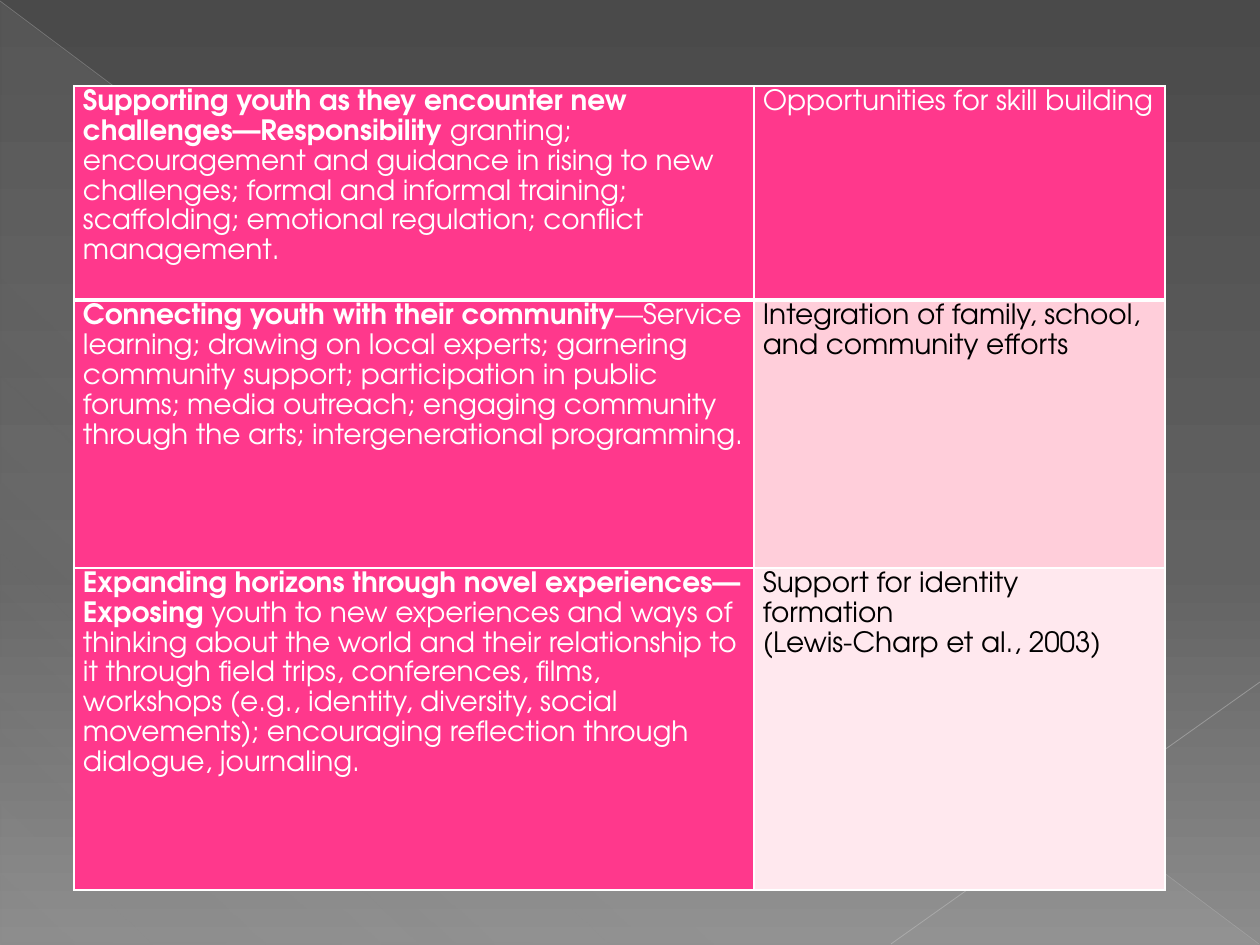
from lxml.etree import SubElement as Sub
from pptx import Presentation as Deck
from pptx.dml.color import RGBColor as Rgb
from pptx.enum.shapes import MSO_CONNECTOR as Conn, MSO_SHAPE as Kind
from pptx.enum.text import PP_ALIGN as Align
from pptx.oxml.ns import qn
from pptx.util import Pt

SCALE = 914400 / 126
HUES = {
    "top": "4A4A4A", "mid": "626262", "low": "8C8C8C", "veil": "D2D2D2",
    "ray": "BFBFBF", "beam": "C6C6C6", "white": "FFFFFF", "black": "000000",
    "pink": "FF388C", "rose": "FFCEDA", "pale": "FFE8EE",
}
FONT = {"name": "TeX Gyre Adventor", "size": Pt(16)}
PARA = {"line_spacing": 1.15, "alignment": Align.LEFT}


def px(n):
    return round(n * SCALE)


def apply(item, style):
    for key, val in style.items():
        setattr(item, key, val)


def tint(node, hue, alpha=100):
    clr = Sub(node, qn("a:srgbClr"), val=HUES[hue])
    if alpha < 100:
        Sub(clr, qn("a:alpha"), val=str(alpha * 1000))


class Page:
    def __init__(self, wide, high):
        self.deck = Deck()
        apply(self.deck, {"slide_width": px(wide), "slide_height": px(high)})
        self.slide = self.deck.slides.add_slide(self.deck.slide_layouts[6])
        self.shapes = self.slide.shapes

    def blend(self, fill, root, stops, angle):
        fill.gradient()
        grad = next(root.iter(qn("a:gradFill")))
        for old in list(grad):
            grad.remove(old)
        group = Sub(grad, qn("a:gsLst"))
        for pos, hue, alpha in stops:
            stop = Sub(group, qn("a:gs"), pos=str(pos * 1000))
            tint(stop, hue, alpha)
        Sub(grad, qn("a:lin"), ang=str(angle * 60000), scaled="0")

    def back(self, stops, angle):
        self.blend(self.slide.background.fill, self.slide.element, stops, angle)

    def wedge(self, box, stops, angle):
        shape = self.shapes.add_shape(Kind.RIGHT_TRIANGLE, *map(px, box))
        shape.shadow.inherit = False
        shape.line.fill.background()
        self.blend(shape.fill, shape.element.spPr, stops, angle)

    def line(self, ends, hue, width, alpha):
        link = self.shapes.add_connector(Conn.STRAIGHT, *map(px, ends))
        link.line.width = Pt(width)
        link.line.color.rgb = Rgb.from_string(HUES[hue])
        props = link.element.spPr
        clr = next(props.iter(qn("a:srgbClr")))
        Sub(clr, qn("a:alpha"), val=str(alpha * 1000))
        Sub(props, qn("a:effectLst"))

    def edge(self, cell, widths):
        props = cell._tc.get_or_add_tcPr()
        for side, width in zip("LRTB", widths):
            line = Sub(props, qn(f"a:ln{side}"), w=str(Pt(width)))
            tint(Sub(line, qn("a:solidFill")), "white")

    def text(self, cell, paras, hue):
        frame = cell.text_frame
        for i, runs in enumerate(paras):
            para = frame.add_paragraph() if i else frame.paragraphs[0]
            apply(para, PARA)
            for words, bold in runs:
                run = para.add_run()
                run.text = words
                apply(run.font, FONT | {"bold": bold})
                run.font.color.rgb = Rgb.from_string(HUES[hue])

    def table(self, spot, cols, rows, cells):
        size = sum(cols), sum(rows)
        grid = self.shapes.add_table(
            len(rows), len(cols), *map(px, spot + size)).table
        apply(grid, {"first_row": False, "horz_banding": False})
        for col, wide in zip(grid.columns, cols):
            col.width = px(wide)
        for r, high in enumerate(rows):
            grid.rows[r].height = px(high)
            for c, (paras, fill, hue) in enumerate(cells[r]):
                cell = grid.cell(r, c)
                apply(cell, {"margin_left": px(9), "margin_right": px(9),
                             "margin_top": 0, "margin_bottom": 0})
                self.edge(cell, (1, 1, 3 if r == 1 else 1, 3 if r == 0 else 1))
                cell.fill.solid()
                cell.fill.fore_color.rgb = Rgb.from_string(HUES[fill])
                self.text(cell, paras, hue)


def theme(head, body):
    return [[(head, True), (body, False)]], "pink", "white"


def goal(fill, hue, *lines):
    return [[(line, False)] for line in lines], fill, hue


CELLS = [
    [theme("Supporting youth as they encounter new challenges—Responsibility ",
           "granting; encouragement and guidance in rising to new challenges; "
           "formal and informal training; scaffolding; emotional regulation; "
           "conflict management."),
     goal("pink", "white", "Opportunities for skill building")],
    [theme("Connecting youth with their community",
           "—Service learning; drawing on local experts; garnering community "
           "support; participation in public forums; media outreach; engaging "
           "community through the arts; intergenerational programming."),
     goal("rose", "black", "Integration of family, school,",
          "and community efforts")],
    [theme("Expanding horizons through novel experiences—Exposing ",
           "youth to new experiences and ways of thinking about the world and "
           "their relationship to it through field trips, conferences, films, "
           "workshops (e.g., identity, diversity, social movements); "
           "encouraging reflection through dialogue, journaling."),
     goal("pale", "black", "Support for identity formation",
          "(Lewis-Charp et al., 2003)")],
]


def main():
    page = Page(1260, 945)
    page.back([(0, "top", 100), (60, "mid", 100), (100, "low", 100)], 90)
    page.wedge((1, 2, 1258, 942),
               [(0, "veil", 10), (70, "veil", 8), (100, "veil", 1)], 133)
    page.line((0, 1, 1259, 944), "ray", 0.39, 35)
    page.line((1260, 682, 891, 944), "beam", 0.47, 45)
    page.table((74, 86), (680, 411), (214, 268, 322), CELLS)
    page.deck.save("out.pptx")


if __name__ == "__main__":
    main()
